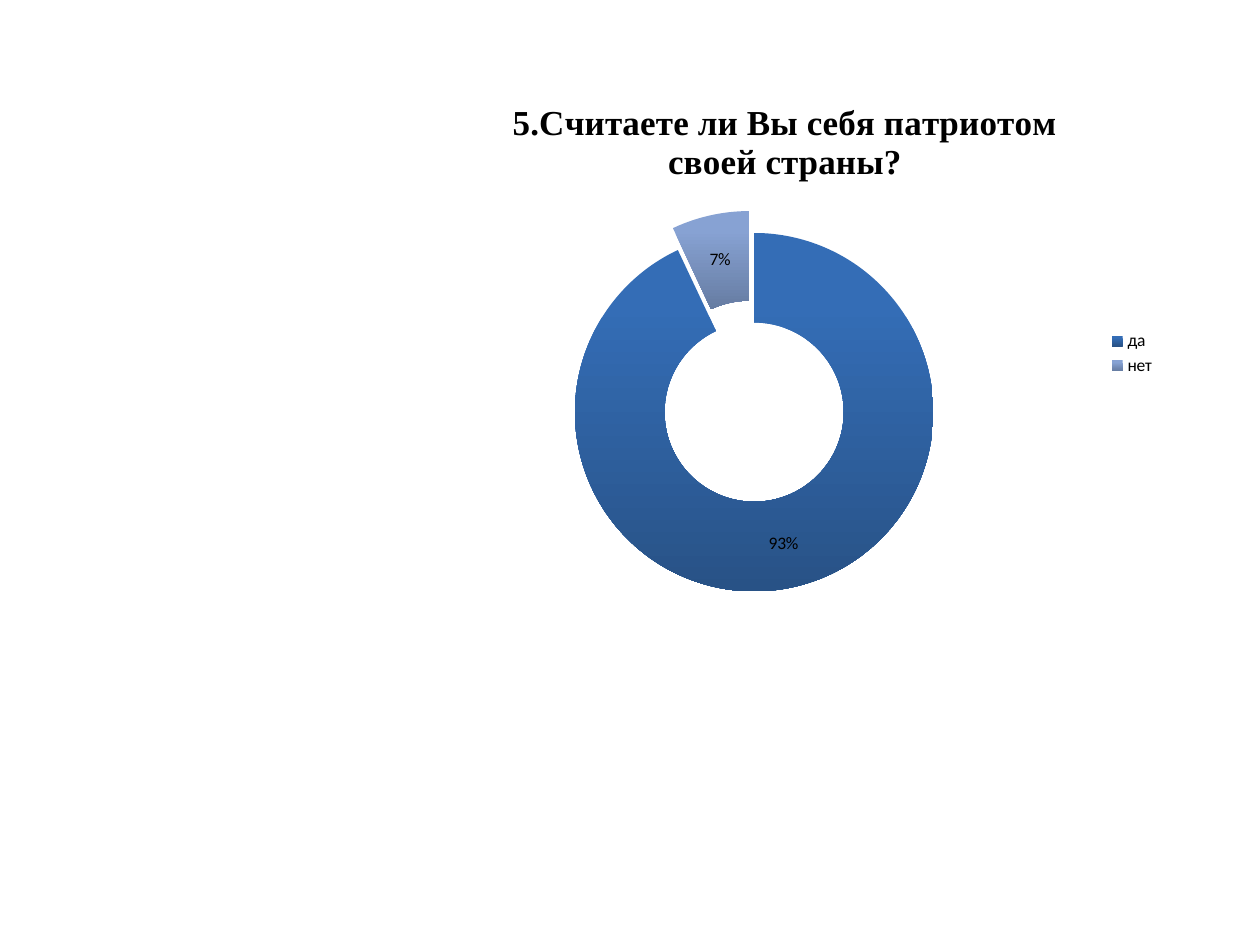
"""Build a slide with an exploded doughnut chart of survey answers."""
from dataclasses import dataclass

from pptx import Presentation
from pptx.chart.data import CategoryChartData
from pptx.chart.series import PieSeries
from pptx.dml.color import RGBColor
from pptx.enum.chart import XL_CHART_TYPE, XL_LEGEND_POSITION
from pptx.oxml import parse_xml
from pptx.oxml.ns import nsdecls, qn
from pptx.util import Pt

DOUGHNUT = XL_CHART_TYPE.DOUGHNUT_EXPLODED
RIGHT = XL_LEGEND_POSITION.RIGHT
BLACK = RGBColor(0x00, 0x00, 0x00)
BLUE_TOP = RGBColor(0x34, 0x6D, 0xB6)
BLUE_BOTTOM = RGBColor(0x28, 0x52, 0x86)
LIGHT_TOP = RGBColor(0x87, 0xA2, 0xD3)
LIGHT_BOTTOM = RGBColor(0x66, 0x7C, 0xA2)


@dataclass(frozen=True)
class Slice:
    answer: str
    percent: int
    top: RGBColor
    bottom: RGBColor
    explosion: int


SLICES = (
    Slice("да", 93, BLUE_TOP, BLUE_BOTTOM, 0),
    Slice("нет", 7, LIGHT_TOP, LIGHT_BOTTOM, 25),
)


def style_slice(series: PieSeries, index: int, item: Slice) -> None:
    fill = series.points[index].format.fill
    fill.gradient()
    fill.gradient_angle = 270
    for stop, color, position in zip(fill.gradient_stops, (item.top, item.bottom), (0.2, 1)):
        stop.color.rgb = color
        stop.position = position
    point = series._element.get_or_add_dPt_for_point(index)
    for old in point.findall(qn("c:explosion")):
        point.remove(old)
    explosion = parse_xml(f'<c:explosion {nsdecls("c")} val="{item.explosion}"/>')
    point.find(qn("c:spPr")).addprevious(explosion)


def main() -> None:
    prs = Presentation()
    prs.slide_width, prs.slide_height = Pt(720), Pt(540)
    s = prs.slides.add_slide(prs.slide_layouts[6])

    data = CategoryChartData()
    data.categories = [item.answer for item in SLICES]
    data.add_series("Series 1", [item.percent for item in SLICES])
    frame = s.shapes.add_chart(DOUGHNUT, Pt(229.7), Pt(43.2), Pt(437.8), Pt(317.5), data)
    chart = frame.chart
    chart.font.name, chart.font.size = "Calibri", Pt(10)
    chart.font.color.rgb = BLACK

    chart.has_title = True
    tf = chart.chart_title.text_frame
    tf.text = "5.Считаете ли Вы себя патриотом своей страны?"
    font = tf.paragraphs[0].runs[0].font
    font.name, font.size, font.bold = "Times New Roman", Pt(20), True
    font.color.rgb = BLACK

    chart.has_legend = True
    chart.legend.position = RIGHT
    chart.legend.include_in_layout = False

    plot = chart.plots[0]
    plot.vary_by_categories = True
    series = plot.series[0]
    for index, item in enumerate(SLICES):
        style_slice(series, index, item)
    labels = series.data_labels
    labels.show_value = False
    labels.show_percentage = True

    prs.save("out.pptx")


if __name__ == "__main__":
    main()
